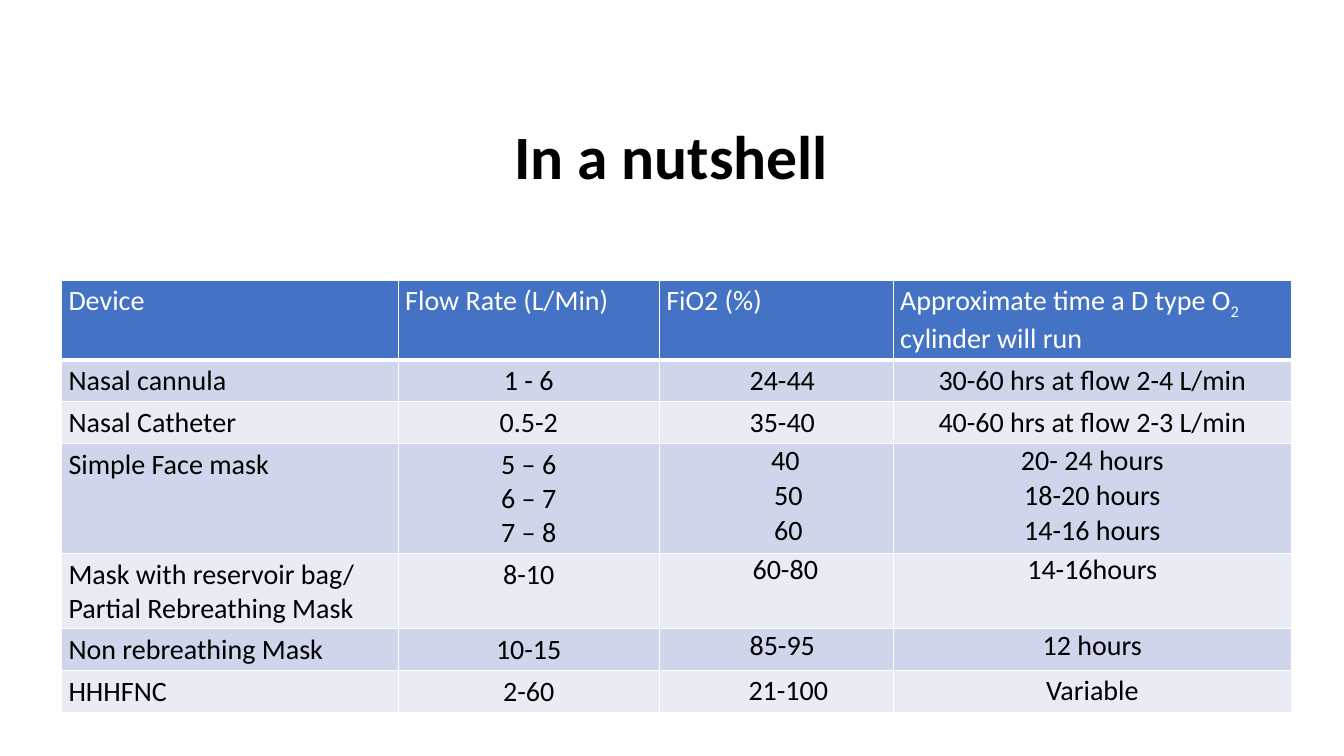
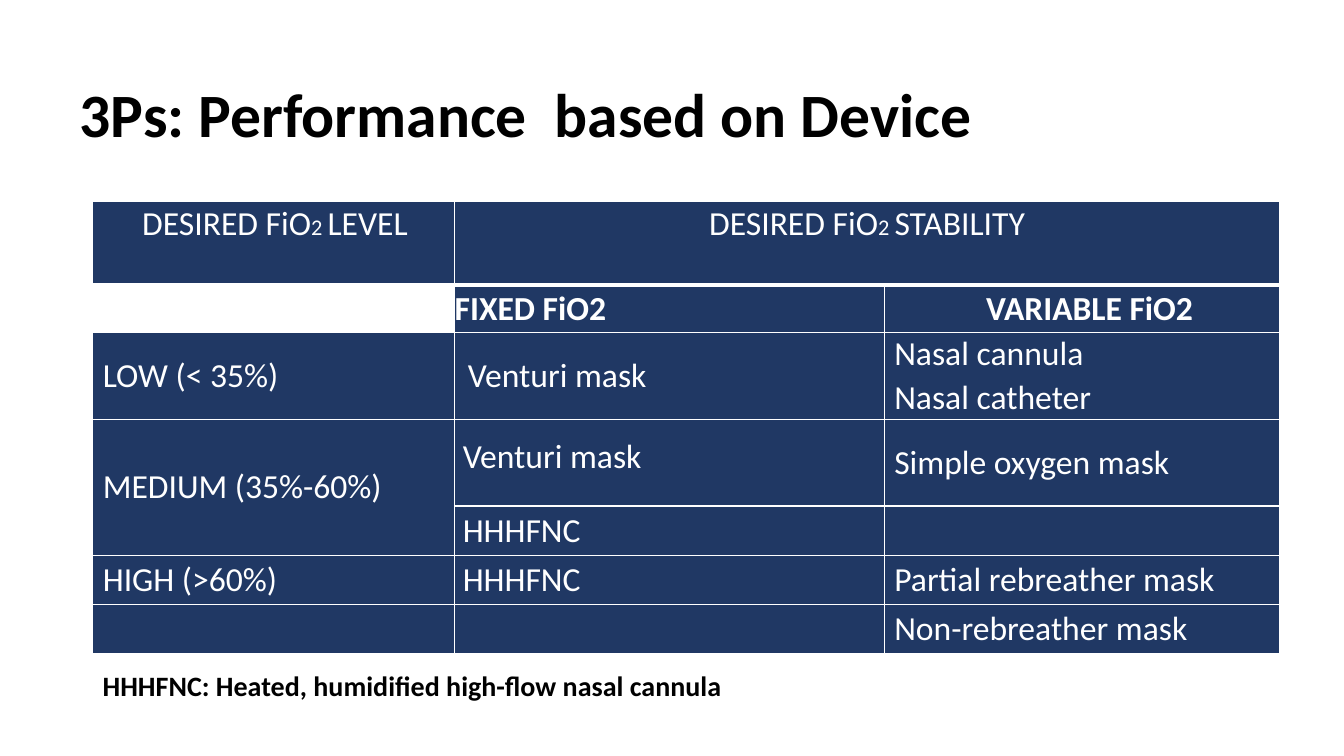
from pptx import Presentation
from pptx.dml.color import RGBColor
from pptx.enum.text import MSO_ANCHOR, PP_ALIGN
from pptx.oxml import parse_xml
from pptx.oxml.ns import nsdecls
from pptx.util import Inches, Pt

BLACK = RGBColor(0x00, 0x00, 0x00)
WHITE = RGBColor(0xFF, 0xFF, 0xFF)
BLUE = RGBColor(0x44, 0x72, 0xC4)
NAVY = RGBColor(0x20, 0x38, 0x64)
BANDS = (RGBColor(0xCF, 0xD5, 0xEA), RGBColor(0xE9, 0xEB, 0xF5))
FONT = "Calibri"
LEFT, CENTER = PP_ALIGN.LEFT, PP_ALIGN.CENTER
TOP, MIDDLE = MSO_ANCHOR.TOP, MSO_ANCHOR.MIDDLE
PADDED = (0.07, 0.04)
FLUSH = (0, 0)
SPACE = 0.06

HEADS = ("Device", "Flow Rate (L/Min)", "FiO2 (%)")
DEVICES = (
    ("Nasal cannula", ["1 - 6"], [("24-44", 2)], ["30-60 hrs at flow 2-4 L/min"], MIDDLE),
    ("Nasal Catheter", ["0.5-2"], [("35-40", 2)], ["40-60 hrs at flow 2-3 L/min"], MIDDLE),
    ("Simple Face mask", ["5 – 6", "6 – 7", "7 – 8"], [("40", 3), ("50", 4), ("60", 4)],
     ["20- 24 hours", "18-20 hours", "14-16 hours"], TOP),
    ("Mask with reservoir bag/ Partial Rebreathing Mask", ["8-10"], [("60-80", 3)],
     ["14-16hours"], TOP),
    ("Non rebreathing Mask", ["10-15"], [("85-95", 2)], ["12 hours"], TOP),
    ("HHHFNC", ["2-60"], [("21-100", 4)], ["Variable"], MIDDLE),
)
LEVELS = (
    (2, 0, ["LOW (< 35%)"], 0.1),
    (2, 1, ["Venturi mask"], 0.13),
    (2, 2, ["Nasal cannula", "Nasal catheter"], 0.1),
    (3, 0, ["MEDIUM (35%-60%)"], 0.1),
    (3, 1, ["Venturi mask"], 0.08),
    (3, 2, ["Simple oxygen mask"], 0.1),
    (4, 1, ["HHHFNC"], 0.08),
    (5, 0, ["HIGH (>60%)"], 0.1),
    (5, 1, ["HHHFNC"], 0.08),
    (5, 2, ["Partial rebreather mask"], 0.1),
    (6, 2, ["Non-rebreather mask"], 0.1),
)


def add_run(para, text, size, color, bold=False):
    """Add one styled run to a paragraph."""
    run = para.add_run()
    run.text = text
    font = run.font
    font.name, font.size, font.bold = FONT, Pt(size), bold
    font.color.rgb = color
    return run


def indent(para, inches):
    """Set the left indent of a paragraph."""
    props = para._p.get_or_add_pPr()
    props.set("marL", str(Inches(inches)))
    props.set("indent", "0")


def add_text(slide, box, text, size, align=LEFT, anchor=TOP, spacing=None):
    """Add a bold black text box."""
    frame = slide.shapes.add_textbox(*map(Inches, box)).text_frame
    frame.word_wrap = True
    frame.vertical_anchor = anchor
    para = frame.paragraphs[0]
    para.alignment = align
    para.line_spacing = spacing
    add_run(para, text, size, BLACK, True)


def add_title(slide, box, text):
    """Add a slide title."""
    add_text(slide, box, text, 44, CENTER, MIDDLE, 0.9)


def rule(cell, top, bottom):
    """Draw white borders round a cell."""
    props = cell._tc.get_or_add_tcPr()
    for side, width in (("L", 1), ("R", 1), ("T", top), ("B", bottom)):
        props.append(parse_xml(
            f'<a:ln{side} {nsdecls("a")} w="{Pt(width)}"><a:solidFill>'
            f'<a:srgbClr val="{WHITE}"/></a:solidFill></a:ln{side}>'))


def add_grid(slide, left, top, cols, rows, fills, heavy):
    """Add a ruled table, with a heavy line below one row."""
    shape = slide.shapes.add_table(
        len(rows), len(cols), Inches(left), Inches(top),
        Inches(sum(cols)), Inches(sum(rows)))
    table = shape.table
    table.first_row = table.horz_banding = False
    for col, width in zip(table.columns, cols):
        col.width = Inches(width)
    for i, (row, height) in enumerate(zip(table.rows, rows)):
        row.height = Inches(height)
        for cell in row.cells:
            rule(cell, 3 if i == heavy + 1 else 1, 3 if i == heavy else 1)
            cell.fill.solid()
            cell.fill.fore_color.rgb = fills[i]
    return table


def set_pad(cell, pad, anchor):
    """Set the margins and anchor of a cell."""
    cell.margin_left = cell.margin_right = Inches(pad[0])
    cell.margin_top = cell.margin_bottom = Inches(pad[1])
    cell.vertical_anchor = anchor


def write(cell, lines, size, color, align=LEFT, pad=FLUSH, anchor=MIDDLE,
          gap=0, bold=False, spacing=None):
    """Write (text, indent) lines into a cell."""
    set_pad(cell, pad, anchor)
    frame = cell.text_frame
    for i, (text, inset) in enumerate(lines):
        para = frame.add_paragraph() if i else frame.paragraphs[0]
        indent(para, inset)
        para.alignment = align
        para.line_spacing = spacing
        if i:
            para.space_before = Pt(gap)
        add_run(para, text, size, color, bold)


def plain(lines):
    """Pair each line with no indent."""
    return [(line, 0) for line in lines]


def build_flow(slide):
    """Build the table of devices and flow rates."""
    add_title(slide, (3.33, 0.8, 6.66, 1.56), "In a nutshell")
    fills = [BLUE] + [BANDS[i % 2] for i in range(len(DEVICES))]
    table = add_grid(slide, 0.61, 2.78, (3.34, 2.59, 2.32, 3.95),
                     (0.79, 0.41, 0.41, 1.09, 0.75, 0.41, 0.41), fills, 0)
    for i, head in enumerate(HEADS):
        write(table.cell(0, i), plain([head]), 20, WHITE, pad=PADDED, anchor=TOP)
    last = table.cell(0, 3)
    set_pad(last, PADDED, TOP)
    para = last.text_frame.paragraphs[0]
    add_run(para, "Approximate time a D type O", 20, WHITE)
    sub = add_run(para, "2", 20, WHITE)
    sub._r.get_or_add_rPr().set("baseline", "-25000")
    add_run(para, " cylinder will run", 20, WHITE)
    for i, (name, flow, level, time, anchor) in enumerate(DEVICES, 1):
        shifts = [(text, count * SPACE) for text, count in level]
        write(table.cell(i, 0), plain([name]), 20, BLACK, pad=PADDED, anchor=TOP)
        write(table.cell(i, 1), plain(flow), 20, BLACK, CENTER, PADDED, TOP)
        write(table.cell(i, 2), shifts, 20, BLACK, CENTER, anchor=anchor, gap=0.6)
        write(table.cell(i, 3), plain(time), 20, BLACK, CENTER, anchor=anchor, gap=0.6)


def build_level(slide):
    """Build the table of oxygen levels and stability."""
    add_title(slide, (0.22, 0.44, 10, 1.45), "3Ps: Performance  based on Device")
    table = add_grid(slide, 0.92, 2, (3.59, 4.26, 3.92),
                     (0.83, 0.47, 0.86, 0.86, 0.49, 0.49, 0.49), [NAVY] * 7, 0)
    table.cell(1, 0).fill.fore_color.rgb = WHITE
    table.cell(0, 1).merge(table.cell(0, 2))
    table.cell(3, 0).merge(table.cell(4, 0))
    for col, word, align, inset in ((0, "LEVEL", LEFT, 0.49), (1, "STABILITY", CENTER, 0)):
        cell = table.cell(0, col)
        set_pad(cell, (0, 0.02), TOP)
        para = cell.text_frame.paragraphs[0]
        indent(para, inset)
        para.alignment = align
        for text, size in (("DESIRED FiO", 24), ("2 ", 16), (word, 24)):
            add_run(para, text, size, WHITE)
    write(table.cell(1, 1), [("FIXED FiO2", 0)], 24, WHITE, bold=True)
    write(table.cell(1, 2), [("VARIABLE FiO2", 1.01)], 24, WHITE, bold=True)
    for row, col, lines, inset in LEVELS:
        spacing = Pt(21.8) if (row, col) == (3, 1) else 0.97 if row == 2 and col else None
        write(table.cell(row, col), [(line, inset) for line in lines], 24, WHITE,
              gap=3.1, spacing=spacing)
    add_text(slide, (0.92, 6.58, 7.57, 0.44),
             "HHHFNC: Heated, humidified high-flow nasal cannula", 20)


def main():
    """Build and save the slides."""
    deck = Presentation()
    deck.slide_width, deck.slide_height = Inches(13.33), Inches(7.5)
    for build in (build_flow, build_level):
        build(deck.slides.add_slide(deck.slide_layouts[6]))
    deck.save("out.pptx")


if __name__ == "__main__":
    main()
